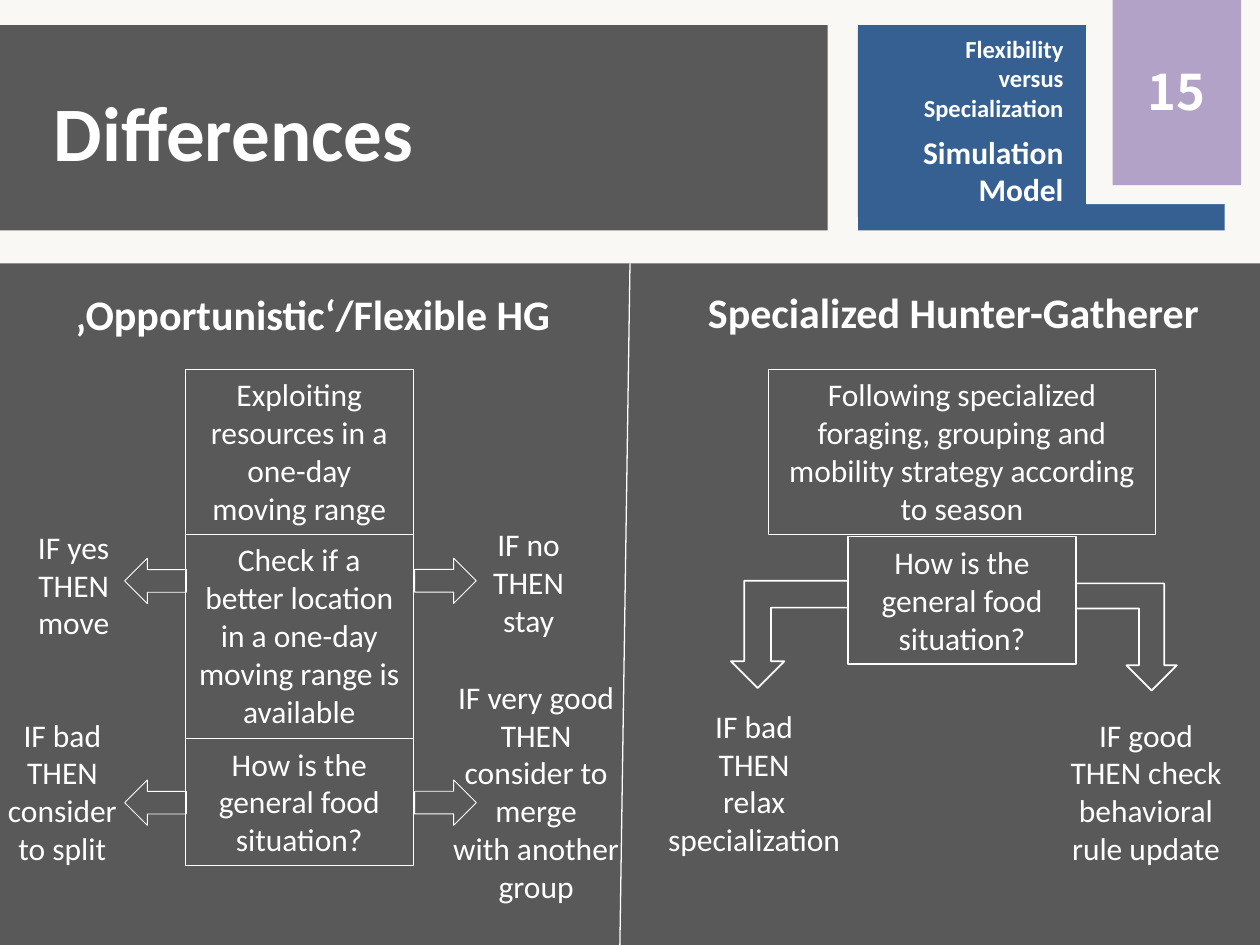
"""Build the slide comparing flexible and specialized hunter-gatherer rules."""
import dataclasses

import pptx
import pptx.dml.color
import pptx.enum.shapes
import pptx.enum.text
import pptx.oxml
import pptx.oxml.ns
import pptx.util

Inches = pptx.util.Inches
Shape = pptx.enum.shapes.MSO_SHAPE
Align = pptx.enum.text.PP_ALIGN
Anchor = pptx.enum.text.MSO_ANCHOR


@dataclasses.dataclass(frozen=True)
class Theme:
    paper: str = "F9F8F5"
    dark: str = "595959"
    blue: str = "376092"
    purple: str = "B3A2C7"
    white: str = "FFFFFF"
    font: str = "Calibri"
    number_font: str = "Noto Sans CJK SC"
    title: int = 44
    number: int = 28
    heading: int = 24
    body: int = 18
    small: int = 14
    border: float = 0.75
    arrow: float = 0.5
    bent_arrow: float = 1


class SlideBuilder:
    def __init__(self, slide, theme):
        self.shapes = slide.shapes
        self.theme = theme

    def color(self, value):
        return pptx.dml.color.RGBColor.from_string(value)

    def shape(self, kind, place, fill=None, line=None, turn=0, flip=False):
        shape = self.shapes.add_shape(kind, *map(Inches, place))
        shape.shadow.inherit = False
        shape.rotation = turn
        if flip:
            shape._element.spPr.xfrm.set("flipH", "1")
        if fill:
            shape.fill.solid()
            shape.fill.fore_color.rgb = self.color(fill)
        else:
            shape.fill.background()
        if line:
            shape.line.color.rgb = self.color(self.theme.white)
            shape.line.width = pptx.util.Pt(line)
        else:
            shape.line.fill.background()
        return shape

    def panel(self, place, fill):
        return self.shape(Shape.RECTANGLE, place, fill)

    def set_text(self, shape, text, sizes, align=Align.CENTER, anchor=Anchor.TOP,
                 bold=False, font=None, after=0):
        frame = shape.text_frame
        frame.word_wrap = True
        frame.vertical_anchor = anchor
        frame.text = text
        for para, size in zip(frame.paragraphs, sizes):
            para.alignment = align
            para.space_after = pptx.util.Pt(after)
            for span in para.runs:
                span.font.name = font or self.theme.font
                span.font.size = pptx.util.Pt(size)
                span.font.bold = bold
                span.font.color.rgb = self.color(self.theme.white)

    def label(self, place, text, size=None, **style):
        box = self.shapes.add_textbox(*map(Inches, place))
        self.set_text(box, text, [size or self.theme.body], **style)

    def step(self, place, text):
        box = self.shape(Shape.RECTANGLE, place, line=self.theme.border)
        self.set_text(box, text, [self.theme.body])

    def divider(self, panel, start, end):
        line = self.shapes.add_connector(
            pptx.enum.shapes.MSO_CONNECTOR.STRAIGHT, *map(Inches, start + end))
        line.begin_connect(panel, 0)
        line.line.color.rgb = self.color(self.theme.white)
        line.line.width = pptx.util.Pt(self.theme.border)
        line._element.spPr.append(
            pptx.oxml.parse_xml(f"<a:effectLst {pptx.oxml.ns.nsdecls('a')}/>"))


def add_header(builder):
    theme = builder.theme
    builder.panel((0, 0, 10, 7.5), theme.paper)
    builder.panel((0, 0.2, 6.57, 1.63), theme.dark)
    builder.label((0.33, 0.23, 8.5, 1.61), "Differences", theme.title,
                  align=Align.LEFT, anchor=Anchor.MIDDLE, bold=True)
    builder.panel((6.81, 0.2, 2.91, 1.63), theme.blue)
    builder.panel((8.62, 0, 1.38, 1.62), theme.paper)
    number = builder.panel((8.83, -0.03, 1.02, 1.5), theme.purple)
    builder.set_text(number, "15", [theme.number], anchor=Anchor.MIDDLE,
                     bold=True, font=theme.number_font)
    topic = builder.panel((6.81, 0.22, 1.73, 1.5), theme.blue)
    builder.set_text(topic, "Flexibility\vversus\vSpecialization\nSimulation\vModel",
                     [theme.small, theme.body], align=Align.RIGHT, bold=True, after=6)


def add_comparison(builder):
    theme = builder.theme
    panel = builder.panel((0, 2.09, 10, 5.41), theme.dark)
    for left, top, text in (
        (0.5, 2.04, "‚Opportunistic‘/Flexible HG"),
        (5.52, 2.02, "Specialized Hunter-Gatherer"),
    ):
        builder.label((left, top, 4.42, 0.7), text, theme.heading,
                      align=Align.LEFT, anchor=Anchor.BOTTOM, bold=True)

    question = "How is the general food situation?"
    for place, text in (
        ((1.47, 2.93, 1.81, 1.31), "Exploiting\vresources in a one-day moving range"),
        ((1.47, 4.24, 1.81, 1.62),
         "Check if a better location in a one-day moving range is available"),
        ((1.47, 5.86, 1.81, 1.01), question),
        ((6.1, 2.93, 3.07, 1.31),
         "Following specialized foraging, grouping and mobility strategy according to season"),
        ((6.73, 4.26, 1.81, 1.01), question),
    ):
        builder.step(place, text)

    for top in (4.43, 6.19):
        for left, turn in ((0.99, 180), (3.29, 0)):
            builder.shape(Shape.RIGHT_ARROW, (left, top, 0.49, 0.36),
                          line=theme.arrow, turn=turn)

    for left, top, height, text in (
        (-0.32, 4.14, 1.31, "IF yes\vTHEN\vmove"),
        (3.29, 4.12, 1.31, "IF no\vTHEN\vstay"),
        (-0.41, 5.63, 1.62, "IF bad\vTHEN\vconsider\vto split"),
        (3.35, 5.33, 2.15, "IF very good\vTHEN\vconsider to merge\vwith another group"),
        (8.19, 5.63, 1.62, "IF good\vTHEN check behavioral\vrule update"),
        (5.08, 5.56, 1.62, "IF bad\vTHEN\vrelax specialization"),
    ):
        builder.label((left, top, 1.81, height), text)

    builder.divider(panel, (5, 2.09), (4.92, 7.5))
    for place, flip in (((5.8, 4.61, 0.93, 0.85), False), ((8.54, 4.63, 0.8, 0.85), True)):
        builder.shape(Shape.BENT_UP_ARROW, place, line=theme.bent_arrow,
                      turn=180, flip=flip)


def main():
    deck = pptx.Presentation()
    deck.slide_width, deck.slide_height = Inches(10), Inches(7.5)
    builder = SlideBuilder(deck.slides.add_slide(deck.slide_layouts[6]), Theme())
    add_header(builder)
    add_comparison(builder)
    deck.save("out.pptx")


if __name__ == "__main__":
    main()
